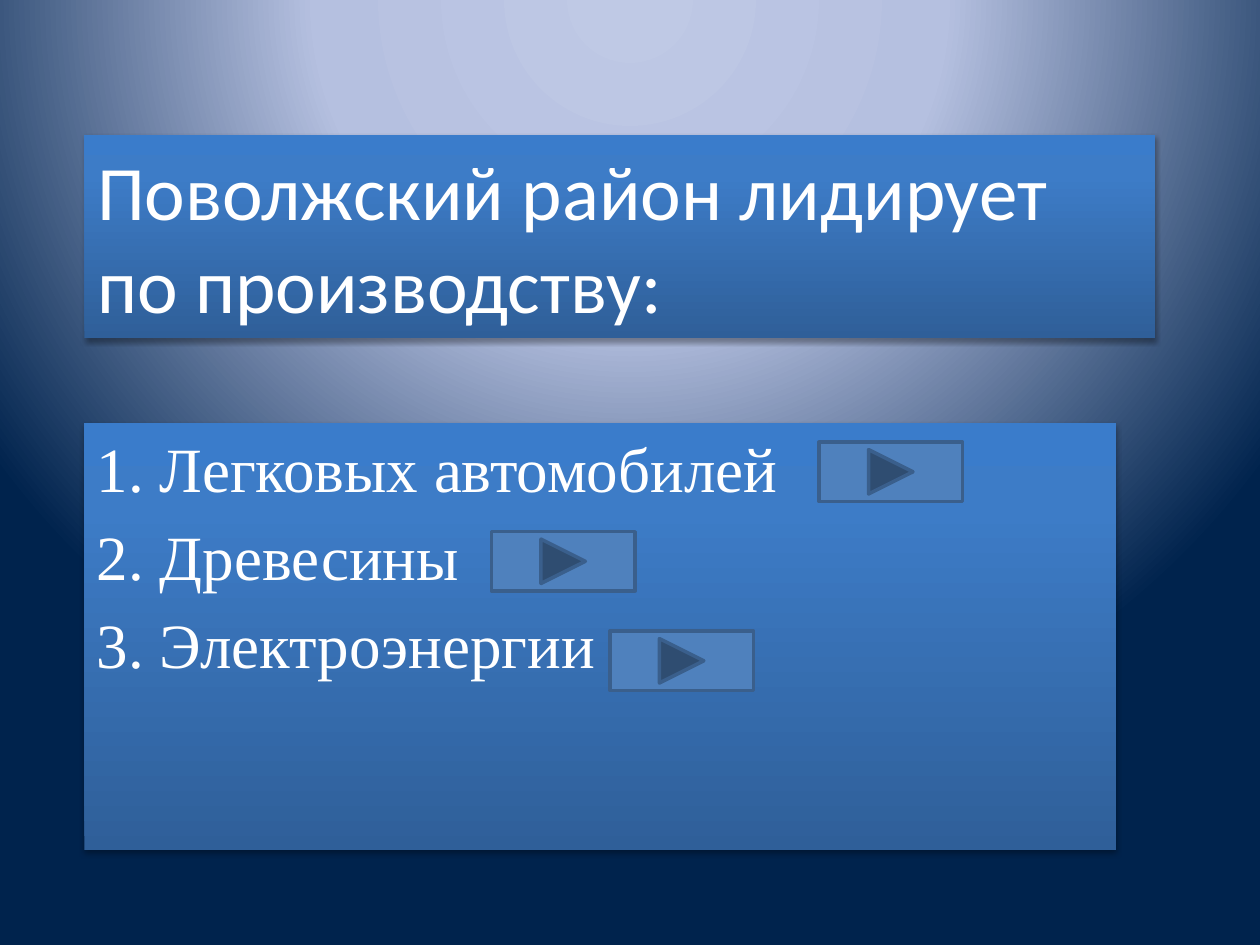
from dataclasses import dataclass

from pptx import Presentation
from pptx.dml.color import RGBColor as RGB
from pptx.enum.shapes import MSO_SHAPE as SHAPE
from pptx.enum.text import MSO_ANCHOR as ANCHOR, MSO_AUTO_SIZE as AUTO, PP_ALIGN as ALIGN
from pptx.oxml import parse_xml
from pptx.oxml.ns import nsdecls, qn
from pptx.util import Inches, Pt

COLORS = {
    "text": "FFFFFF",
    "button": "4F81BD",
    "button_line": "3A5F8C",
    "shadow": "000000",
    "panel_bottom": "2F5F99",
    "panel_middle": "3D7CC7",
    "panel_top": "3A7CCB",
    "glow_center": "BFC9E5",
    "glow_middle": "B5C0E0",
    "glow_edge": "00234D",
}
PANEL_STOPS = [(0, "panel_bottom"), (80, "panel_middle"), (100, "panel_top")]
PANEL_SHADE = '<a:lin ang="16200000" scaled="0"/>'
GLOW_STOPS = [(0, "glow_center"), (40, "glow_middle"), (100, "glow_edge")]
GLOW_SHADE = (
    '<a:path path="circle">'
    '<a:fillToRect l="50000" t="-80000" r="50000" b="180000"/></a:path>'
)


@dataclass
class Panel:
    left: float
    top: float
    width: float
    height: float
    lines: list[str]
    font: str
    size: int
    anchor: ANCHOR


@dataclass
class Button:
    left: float
    top: float


TITLE = Panel(0.67, 1.07, 8.5, 1.61, ["Поволжский район лидирует по производству:"],
              "Calibri", 44, ANCHOR.MIDDLE)
PRODUCTS = Panel(0.67, 3.36, 8.19, 3.39,
                 ["1. Легковых автомобилей", "2. Древесины", "3. Электроэнергии"],
                 "Times New Roman", 36, ANCHOR.TOP)
BUTTONS = [Button(4.84, 5.01), Button(3.9, 4.22), Button(6.5, 3.51)]


def set_gradient(fill, parent, stops: list[tuple[int, str]], shade: str) -> None:
    fill.background()
    gs = "".join(
        f'<a:gs pos="{pos * 1000}"><a:srgbClr val="{COLORS[name]}"/></a:gs>'
        for pos, name in stops
    )
    grad = parse_xml(
        f'<a:gradFill {nsdecls("a")} rotWithShape="1">'
        f"<a:gsLst>{gs}</a:gsLst>{shade}</a:gradFill>"
    )
    parent.replace(parent.find(qn("a:noFill")), grad)


def add_shadow(s) -> None:
    s._element.spPr.append(parse_xml(
        f'<a:effectLst {nsdecls("a")}>'
        f'<a:outerShdw blurRad="{Pt(3.1)}" dist="{Pt(1.8)}" dir="5400000" rotWithShape="0">'
        f'<a:srgbClr val="{COLORS["shadow"]}"><a:alpha val="35000"/></a:srgbClr>'
        "</a:outerShdw></a:effectLst>"
    ))


def format_panel(s, panel: Panel) -> None:
    s.left, s.top = Inches(panel.left), Inches(panel.top)
    s.width, s.height = Inches(panel.width), Inches(panel.height)
    set_gradient(s.fill, s._element.spPr, PANEL_STOPS, PANEL_SHADE)
    add_shadow(s)
    tf = s.text_frame
    tf.text = "\n".join(panel.lines)
    tf.word_wrap = True
    tf.auto_size = AUTO.NONE
    tf.vertical_anchor = panel.anchor
    for p in tf.paragraphs:
        p.alignment = ALIGN.LEFT
        for r in p.runs:
            r.font.name = panel.font
            r.font.size = Pt(panel.size)
            r.font.color.rgb = RGB.from_string(COLORS["text"])


def add_products(slide, panel: Panel) -> None:
    s = slide.shapes.add_textbox(0, 0, 0, 0)
    format_panel(s, panel)
    for p in s.text_frame.paragraphs:
        p.space_before = Pt(panel.size * 0.2)
        pPr = p._p.get_or_add_pPr()
        pPr.set("marL", str(Inches(0.81)))
        pPr.set("indent", str(-Inches(0.81)))


def add_button(slide, button: Button) -> None:
    s = slide.shapes.add_shape(SHAPE.ACTION_BUTTON_FORWARD_OR_NEXT, Inches(button.left),
                               Inches(button.top), Inches(1.14), Inches(0.47))
    s.shadow.inherit = False
    s.fill.solid()
    s.fill.fore_color.rgb = RGB.from_string(COLORS["button"])
    s.line.color.rgb = RGB.from_string(COLORS["button_line"])
    s.line.width = Pt(2)


def main() -> None:
    prs = Presentation()
    prs.slide_width, prs.slide_height = Inches(10), Inches(7.5)
    slide = prs.slides.add_slide(prs.slide_layouts[5])
    fill = slide.background.fill
    set_gradient(fill, slide._element.xpath(".//p:bgPr")[0], GLOW_STOPS, GLOW_SHADE)
    format_panel(slide.shapes.title, TITLE)
    add_products(slide, PRODUCTS)
    for button in BUTTONS:
        add_button(slide, button)
    prs.save("out.pptx")


if __name__ == "__main__":
    main()
